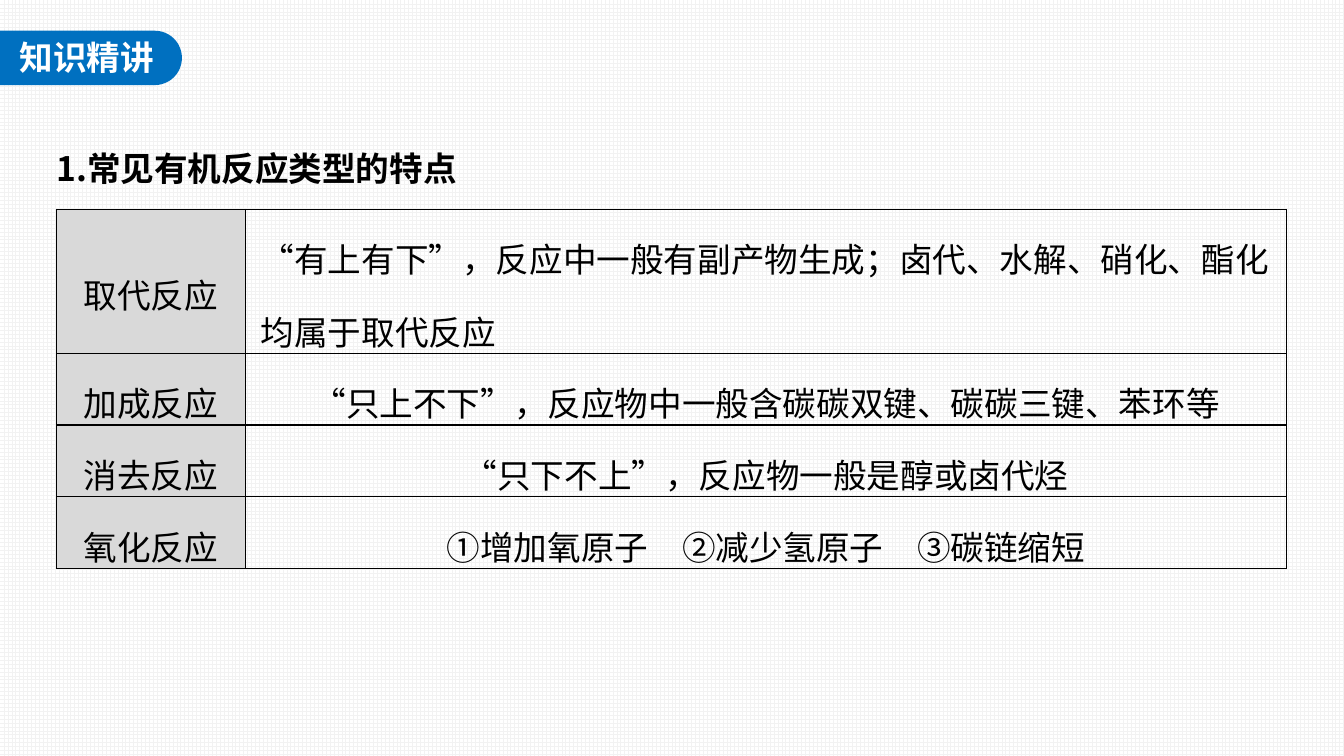
from itertools import groupby

from lxml import etree
from pptx import Presentation
from pptx.dml.color import RGBColor
from pptx.enum.dml import MSO_PATTERN
from pptx.enum.shapes import MSO_SHAPE
from pptx.enum.text import MSO_ANCHOR, MSO_AUTO_SIZE, PP_ALIGN
from pptx.oxml.ns import qn
from pptx.util import Cm, Pt

COLORS = {
    "banner": "0070C0",
    "white": "FFFFFF",
    "text": "000000",
    "label": "D9D9D9",
    "grid": "F2F2F2",
}
SANS = "Noto Sans CJK SC"
SERIF = "Times New Roman"
SANS_MARKS = "“”①②③"

REACTIONS = [
    ("取代反应", "“有上有下”，反应中一般有副产物生成；卤代、水解、硝化、酯化均属于取代反应"),
    ("加成反应", "“只上不下”，反应物中一般含碳碳双键、碳碳三键、苯环等"),
    ("消去反应", "“只下不上”，反应物一般是醇或卤代烃"),
    ("氧化反应", "①增加氧原子　②减少氢原子　③碳链缩短"),
]


def rgb(name):
    return RGBColor.from_string(COLORS[name])


def format_paragraph(p, color="text", bold=False, align=None, spacing=None):
    p.font.size = Pt(24)
    p.font.bold = bold
    p.font.color.rgb = rgb(color)
    p.alignment = align
    p.line_spacing = spacing


def add_run(p, text, font):
    """Add a run whose Latin and East Asian typefaces are both set."""
    r = p.add_run()
    r.text = text
    r.font.name = font
    ea = etree.SubElement(r.font._element, qn("a:ea"))
    ea.set("typeface", SANS)


def set_grid_background(slide):
    fill = slide.background.fill
    fill.patterned()
    fill.pattern = MSO_PATTERN.LARGE_GRID
    fill.fore_color.rgb = rgb("grid")
    fill.back_color.rgb = rgb("white")


def add_banner(slide, text):
    sp = slide.shapes.add_shape(MSO_SHAPE.ROUND_2_SAME_RECTANGLE,
                                Cm(1.6), Cm(-0.84), Cm(1.37), Cm(4.6))
    sp.rotation = 90
    sp.adjustments[0] = 0.5
    sp.adjustments[1] = 0
    sp.shadow.inherit = False
    sp.fill.solid()
    sp.fill.fore_color.rgb = rgb("banner")
    sp.line.fill.background()

    tf = slide.shapes.add_textbox(Cm(0.25), Cm(0.81), Cm(3.94), Cm(1.27)).text_frame
    tf.word_wrap = False
    tf.auto_size = MSO_AUTO_SIZE.SHAPE_TO_FIT_TEXT
    p = tf.paragraphs[0]
    format_paragraph(p, color="white", bold=True)
    add_run(p, text, "Arial")


def set_heading(slide, text):
    title = slide.shapes.title
    title.left, title.top, title.width, title.height = Cm(1.09), Cm(3.05), Cm(31.7), Cm(1.68)
    tf = title.text_frame
    tf.word_wrap = True
    tf.auto_size = MSO_AUTO_SIZE.SHAPE_TO_FIT_TEXT
    tf.vertical_anchor = MSO_ANCHOR.TOP
    tf.margin_left = tf.margin_right = Cm(0.33)
    tf.margin_top = tf.margin_bottom = Cm(0.18)
    p = tf.paragraphs[0]
    format_paragraph(p, bold=True, align=PP_ALIGN.JUSTIFY, spacing=1.5)
    p.space_before = Pt(0)
    add_run(p, text, SANS)


def set_borders(cell):
    tcPr = cell._tc.get_or_add_tcPr()
    for side in ("lnL", "lnR", "lnT", "lnB"):
        ln = etree.SubElement(tcPr, qn(f"a:{side}"), w=str(Pt(1)))
        solid = etree.SubElement(ln, qn("a:solidFill"))
        etree.SubElement(solid, qn("a:srgbClr"), val=COLORS["text"])


def fill_cell(cell, text, align=PP_ALIGN.CENTER):
    """Write the text, with quotation marks and circled numbers in the sans font."""
    set_borders(cell)
    cell.vertical_anchor = MSO_ANCHOR.MIDDLE
    cell.margin_left = cell.margin_right = Cm(0.18)
    cell.margin_top = cell.margin_bottom = 0
    p = cell.text_frame.paragraphs[0]
    format_paragraph(p, align=align, spacing=1.5)
    for is_mark, chars in groupby(text, lambda char: char in SANS_MARKS):
        add_run(p, "".join(chars), SANS if is_mark else SERIF)


def add_reaction_table(slide):
    frame = slide.shapes.add_table(len(REACTIONS), 2, Cm(1.42), Cm(5.28), Cm(31), Cm(9.05))
    table = frame.table
    table.first_row = table.horz_banding = False
    table.columns[0].width = Cm(4.77)
    table.columns[1].width = Cm(26.23)
    for i, (reaction, feature) in enumerate(REACTIONS):
        table.rows[i].height = Cm(1.81 if i else 3.62)
        label, detail = table.cell(i, 0), table.cell(i, 1)
        fill_cell(label, reaction)
        label.fill.solid()
        label.fill.fore_color.rgb = rgb("label")
        fill_cell(detail, feature, PP_ALIGN.CENTER if i else PP_ALIGN.LEFT)
        detail.fill.background()
    first_detail = table.cell(0, 1).text_frame.paragraphs[0]
    first_detail._p.get_or_add_pPr().set("marL", str(Cm(0.2)))


def main():
    prs = Presentation()
    prs.slide_width, prs.slide_height = Cm(33.87), Cm(19.05)
    slide = prs.slides.add_slide(prs.slide_layouts[5])
    set_grid_background(slide)
    add_banner(slide, "知识精讲")
    set_heading(slide, "1.常见有机反应类型的特点")
    add_reaction_table(slide)
    prs.save("out.pptx")


if __name__ == "__main__":
    main()
